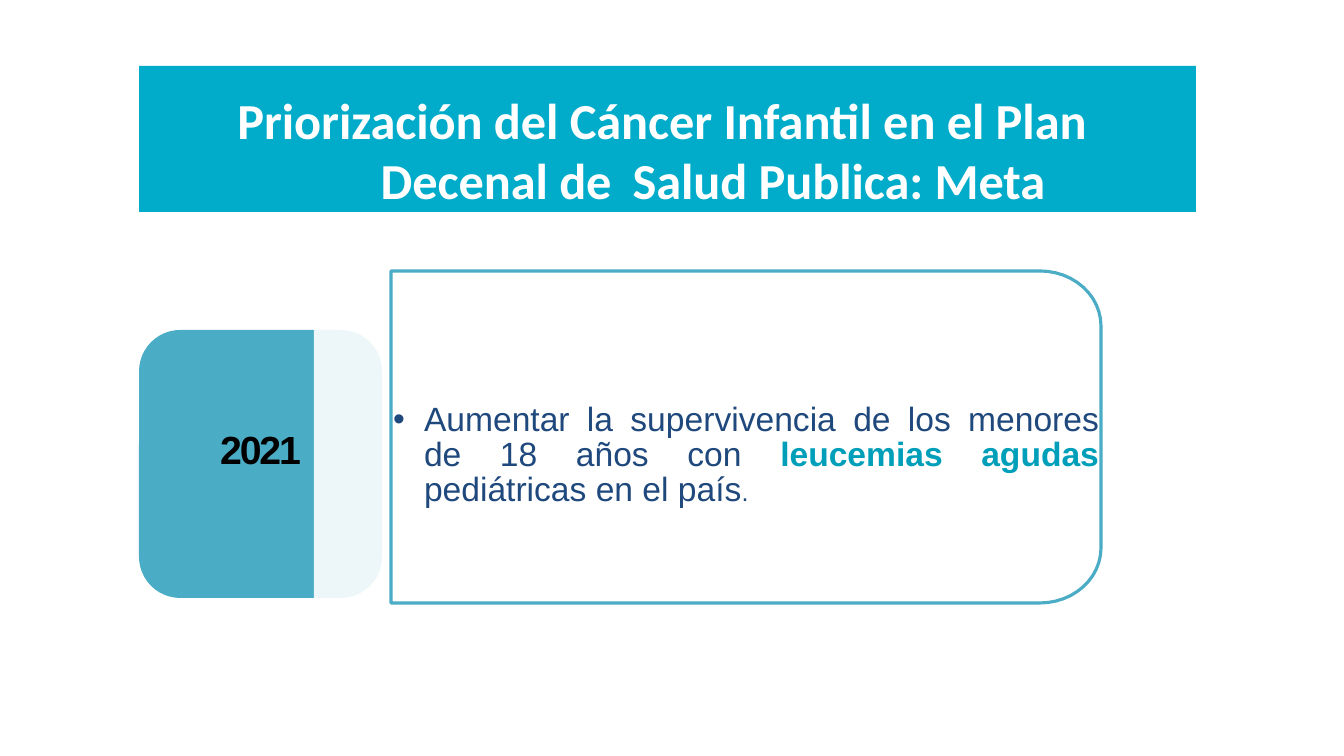
"""Builds the slide on the childhood cancer target of the ten-year public health plan."""
import math

import pptx
import pptx.dml.color
import pptx.enum.shapes
import pptx.enum.text
import pptx.oxml
import pptx.oxml.ns
import pptx.util

PX = 9071.43
THEME = {
    "banner": "00ACCA", "teal": "4AACC5", "accent": "009FB9", "navy": "1F487C",
    "white": "FFFFFF", "black": "000000",
    "heading_font": "Calibri", "text_font": "Arial",
    "title_size": 36, "year_size": 28, "body_size": 24, "stop_size": 18,
}
ALIGN = pptx.enum.text.PP_ALIGN
NAMESPACE = pptx.oxml.ns.nsdecls("a")


def px(length):
    return pptx.util.Emu(round(length * PX))


def write(shape, runs, font, size, color, align, top=0, right=0, bold=False, spacing=0,
          left=0, indent=0, line_spacing=1.0, extras=()):
    """Fill a shape with one paragraph made of (text, format changes) runs."""
    frame = shape.text_frame
    frame.word_wrap = True
    frame.auto_size = pptx.enum.text.MSO_AUTO_SIZE.NONE
    frame.vertical_anchor = pptx.enum.text.MSO_ANCHOR.TOP
    frame.margin_left = frame.margin_bottom = 0
    frame.margin_right = px(right)
    frame.margin_top = px(top)
    paragraph = frame.paragraphs[0]
    properties = paragraph._p.get_or_add_pPr()
    properties.set("marL", str(px(left)))
    properties.set("indent", str(px(indent)))
    for extra in extras:
        properties.append(pptx.oxml.parse_xml(extra))
    paragraph.alignment = align
    paragraph.line_spacing = line_spacing
    paragraph.space_before = pptx.util.Pt(0)
    for text, changes in runs:
        run = paragraph.add_run()
        run.text = text
        run.font.name = font
        run.font.size = pptx.util.Pt(changes.get("size", size))
        run.font.bold = changes.get("bold", bold)
        run.font.color.rgb = pptx.dml.color.RGBColor.from_string(changes.get("color", color))
        run._r.get_or_add_rPr().set("spc", str(spacing))


presentation = pptx.Presentation()
presentation.slide_width = px(1344)
presentation.slide_height = px(756)
slide = presentation.slides.add_slide(presentation.slide_layouts[1])
shapes = slide.shapes

title = shapes.title
title.left, title.top, title.width, title.height = px(139), px(66), px(1057), px(146)
title.fill.solid()
title.fill.fore_color.rgb = pptx.dml.color.RGBColor.from_string(THEME["banner"])
title_tab = f'<a:tabLst {NAMESPACE}><a:tab pos="{px(464)}" algn="l"/></a:tabLst>'
write(title, [("Priorización del Cáncer Infantil en el Plan Decenal de\tSalud Publica: Meta", {})],
      THEME["heading_font"], THEME["title_size"], THEME["white"], ALIGN.CENTER,
      top=23, right=72, bold=True, spacing=-5, left=163, indent=-102, extras=[title_tab])

year = shapes.add_shape(pptx.enum.shapes.MSO_SHAPE.ROUNDED_RECTANGLE,
                        px(139), px(330), px(243), px(268))
year.adjustments[0] = 0.17
year.shadow.inherit = False
year.fill.solid()
year.fill.fore_color.rgb = pptx.dml.color.RGBColor.from_string(THEME["teal"])
year.line.fill.background()
write(year, [("2021", {})], THEME["text_font"], THEME["year_size"], THEME["black"],
      ALIGN.CENTER, top=83, bold=True, spacing=-150)

PANEL_HEIGHT, CORNER_HEIGHT = 332, 55
for left, top, width, corner_width, outlined in [(314, 267, 639, 55, False),
                                                (391, 271, 710, 61, True)]:
    corner_x = left + width - corner_width
    points = [(px(left), px(top))]
    for center_y, first_angle in [(top + CORNER_HEIGHT, -90),
                                  (top + PANEL_HEIGHT - CORNER_HEIGHT, 0)]:
        for step in range(13):
            angle = math.radians(first_angle + 7.5 * step)
            points.append((px(corner_x + corner_width * math.cos(angle)),
                           px(center_y + CORNER_HEIGHT * math.sin(angle))))
    points.append((px(left), px(top + PANEL_HEIGHT)))
    builder = shapes.build_freeform(*points[0], scale=1.0)
    builder.add_line_segments(points[1:], close=True)
    panel = builder.convert_to_shape()
    panel.shadow.inherit = False
    panel.fill.solid()
    panel.fill.fore_color.rgb = pptx.dml.color.RGBColor.from_string(THEME["white"])
    fill_color = panel._element.spPr.find(".//" + pptx.oxml.ns.qn("a:srgbClr"))
    fill_color.append(pptx.oxml.parse_xml(f'<a:alpha {NAMESPACE} val="90000"/>'))
    if outlined:
        panel.line.color.rgb = pptx.dml.color.RGBColor.from_string(THEME["teal"])
        panel.line.width = pptx.util.Pt(2.25)
    else:
        panel.line.fill.background()

goal = slide.placeholders[1]
goal.left, goal.top, goal.width, goal.height = px(391), px(271), px(710), px(PANEL_HEIGHT)
shapes._spTree.append(goal._element)
bullet = [f'<a:buFont {NAMESPACE} typeface="Arial"/>', f'<a:buChar {NAMESPACE} char="•"/>']
write(goal, [("Aumentar la supervivencia de los menores de 18 años con ", {}),
             ("leucemias agudas ", {"color": THEME["accent"], "bold": True}),
             ("pediátricas en el país", {}),
             (".", {"size": THEME["stop_size"]})],
      THEME["text_font"], THEME["body_size"], THEME["navy"], ALIGN.JUSTIFY,
      top=133, right=2, left=33, indent=-31, line_spacing=0.86, extras=bullet)

presentation.save("out.pptx")
